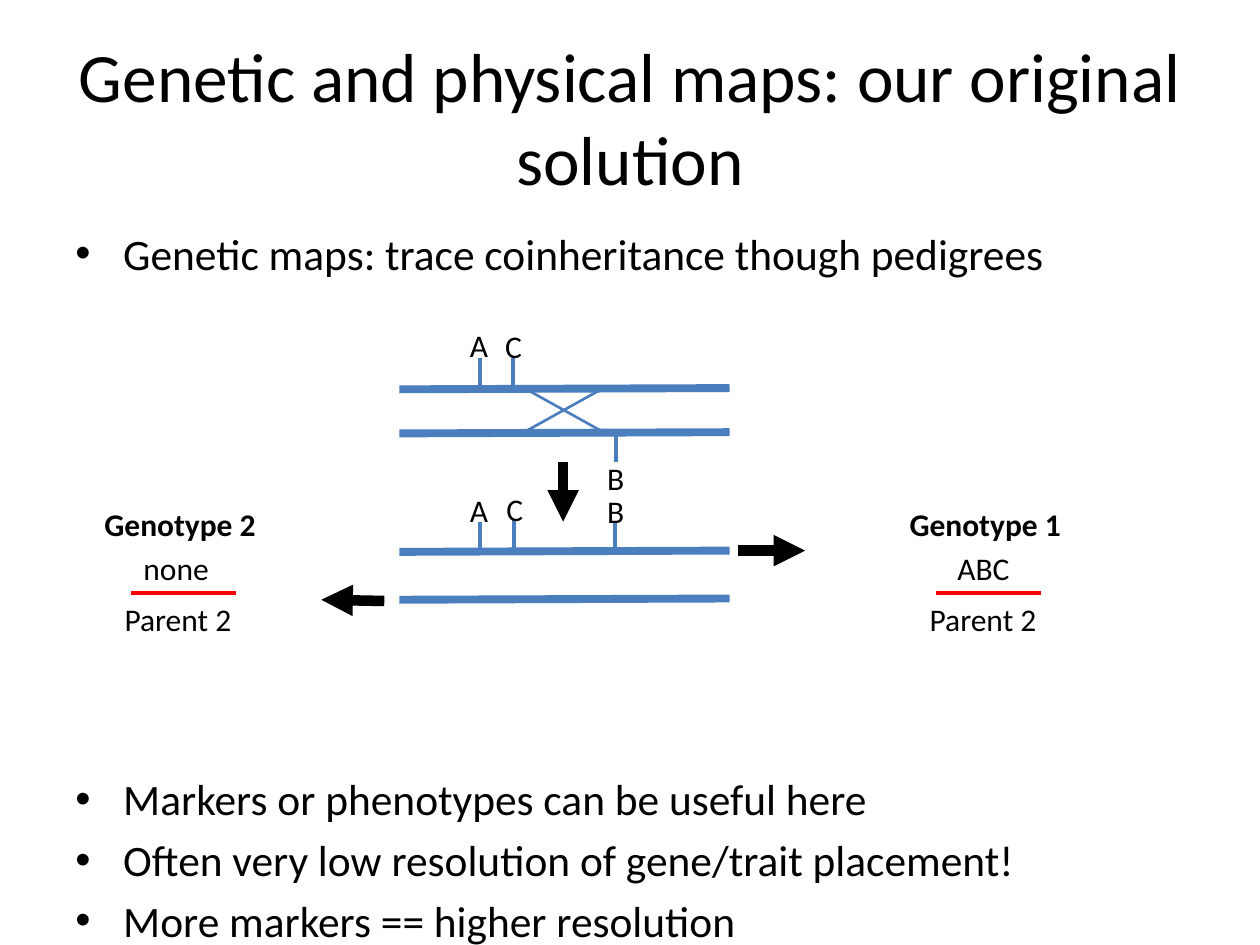
from lxml.etree import SubElement
from pptx import Presentation
from pptx.dml.color import RGBColor
from pptx.enum.shapes import MSO_CONNECTOR
from pptx.enum.text import MSO_ANCHOR, MSO_AUTO_SIZE, PP_ALIGN
from pptx.oxml.ns import qn
from pptx.util import Inches, Pt

BLUE, BLACK, RED = "4B7EBC", "000000", "FF0000"


def paint(color, value):
    color.rgb = RGBColor.from_string(value)


def add_span(para, text, size, bold=False):
    span = para.add_run()
    span.text = text
    span.font.name = "Calibri"
    span.font.size = Pt(size)
    span.font.bold = bold
    paint(span.font.color, BLACK)


def add_box(page, left, top, width, height, wrap=True):
    box = page.shapes.add_textbox(Inches(left), Inches(top), Inches(width), Inches(height))
    box.text_frame.word_wrap = wrap
    return box.text_frame


def add_title(page, text):
    frame = add_box(page, 0.5, 0.3, 9, 1.25)
    frame.vertical_anchor = MSO_ANCHOR.MIDDLE
    para = frame.paragraphs[0]
    para.alignment = PP_ALIGN.CENTER
    add_span(para, text, 39.6)


def add_bullets(page, items):
    frame = add_box(page, 0.5, 1.75, 9, 4.95)
    for index, (text, space) in enumerate(items):
        para = frame.add_paragraph() if index else frame.paragraphs[0]
        para.space_before = Pt(space)
        properties = para._p.get_or_add_pPr()
        properties.set("marL", str(Inches(0.38)))
        properties.set("indent", str(-Inches(0.38)))
        SubElement(properties, qn("a:buFont"), typeface="Arial")
        SubElement(properties, qn("a:buChar"), char="•")
        add_span(para, text, 24.8)


def add_label(page, text, left, top, width, bold=False):
    frame = add_box(page, left, top, width, 0.4, wrap=False)
    frame.auto_size = MSO_AUTO_SIZE.SHAPE_TO_FIT_TEXT
    add_span(frame.paragraphs[0], text, 18, bold)


def add_line(page, start, end, color, width):
    line = page.shapes.add_connector(
        MSO_CONNECTOR.STRAIGHT, *(Inches(value) for value in (*start, *end))
    )
    paint(line.line.color, color)
    line.line.width = Pt(width)
    SubElement(line._element.spPr, qn("a:effectLst"))
    return line


def add_arrow(page, start, end):
    arrow = add_line(page, start, end, BLACK, 6)
    SubElement(arrow.line._get_or_add_ln(), qn("a:tailEnd"), type="triangle")


def add_chromosome(page, top):
    add_line(page, (3.17, top), (5.79, top - 0.01), BLUE, 4.5)


def add_marker(page, name, x, tick_top, label_left, label_top):
    add_line(page, (x, tick_top), (x, tick_top + 0.23), BLUE, 2.25)
    add_label(page, name, label_left, label_top, 0.35)


def add_genotype(page, heading, alleles, center, alleles_left, alleles_width):
    add_label(page, heading, center - 0.72, 3.96, 1.41, bold=True)
    add_label(page, alleles, alleles_left, 4.31, alleles_width)
    add_line(page, (center - 0.41, 4.71), (center + 0.42, 4.71), RED, 2.25)
    add_label(page, "Parent 2", center - 0.56, 4.71, 1.06)


def main():
    deck = Presentation()
    deck.slide_width, deck.slide_height = Inches(10), Inches(7.5)
    page = deck.slides.add_slide(deck.slide_layouts[6])

    add_title(page, "Genetic and physical maps: our original solution")
    add_bullets(page, [
        ("Genetic maps: trace coinheritance though pedigrees", 0),
        ("Markers or phenotypes can be useful here", 282),
        ("Often very low resolution of gene/trait placement!", 5),
        ("More markers == higher resolution", 5),
    ])

    for top in (3.09, 3.44, 4.38, 4.76):
        add_chromosome(page, top)
    for left, right in ((4.16, 4.79), (4.79, 4.16)):
        add_line(page, (left, 3.08), (right, 3.43), BLUE, 1.5)

    for marker in (
        ("A", 3.81, 2.84, 3.63, 2.54),
        ("C", 4.07, 2.84, 3.91, 2.55),
        ("B", 4.89, 3.44, 4.72, 3.59),
        ("A", 3.81, 4.14, 3.63, 3.85),
        ("C", 4.08, 4.13, 3.92, 3.84),
        ("B", 4.88, 4.14, 4.72, 3.86),
    ):
        add_marker(page, *marker)

    add_arrow(page, (4.47, 3.67), (4.47, 4.14))
    add_arrow(page, (5.86, 4.37), (6.39, 4.37))
    add_arrow(page, (3.05, 4.77), (2.55, 4.76))

    add_genotype(page, "Genotype 1", "ABC", 7.84, 7.5, 0.62)
    add_genotype(page, "Genotype 2", "none", 1.45, 1.04, 0.73)
    deck.save("out.pptx")


if __name__ == "__main__":
    main()
